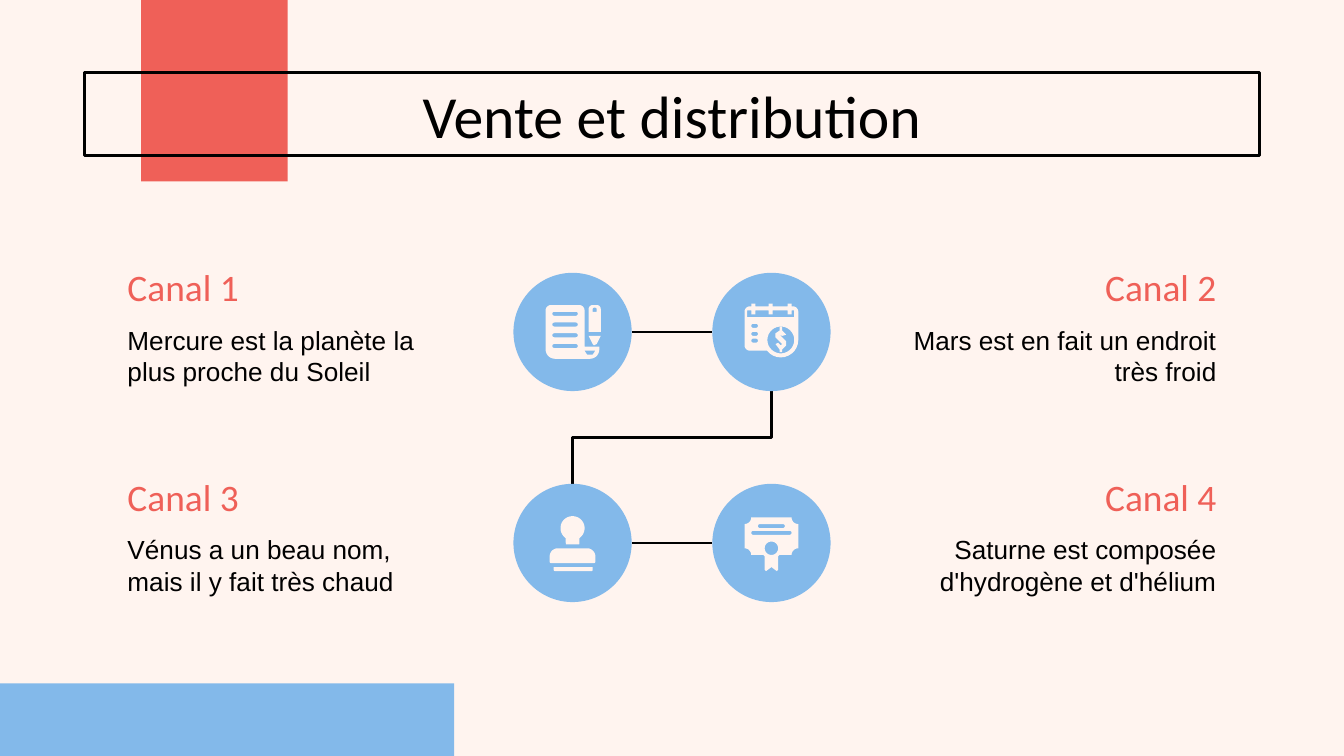
import math
from dataclasses import dataclass

from lxml import etree
from pptx import Presentation
from pptx import util as u
from pptx.dml.color import RGBColor
from pptx.enum import shapes, text
from pptx.oxml.ns import qn


@dataclass(frozen=True)
class Theme:
    cream: str = "FFF4EF"
    coral: str = "EF6058"
    blue: str = "83B9EA"
    ink: str = "000000"
    display: str = "Calibri"
    plain: str = "Arial"
    title: int = 32
    heading: int = 20
    body: int = 14
    line: float = 1.5


THEME = Theme()
WIDTH = 10
HEIGHT = WIDTH * 9 / 16
DISC = 0.88
DISC_COLUMNS, DISC_ROWS = (4.26, 5.74), (2.47, 4.04)  # disc centres
TEXT_COLUMNS, TEXT_ROWS = (0.85, 6.54), (1.96, 3.52)
TEXT_WIDTH, HEADING_HEIGHT = 2.61, 0.35
RECT, OVAL = shapes.MSO_SHAPE.RECTANGLE, shapes.MSO_SHAPE.OVAL

CHANNELS = [
    ("Canal 1", "Mercure est la planète la plus proche du Soleil"),
    ("Canal 2", "Mars est en fait un endroit très froid"),
    ("Canal 3", "Vénus a un beau nom, mais il y fait très chaud"),
    ("Canal 4", "Saturne est composée d'hydrogène et d'hélium"),
]


# Contours: lists of points in inches from the disc centre, angles clockwise
def arc(x, y, radius, start, end):
    steps = max(6, abs(end - start) // 12)
    angles = [math.radians(start + (end - start) * i / steps) for i in range(steps + 1)]
    return [(x + radius * math.cos(a), y + radius * math.sin(a)) for a in angles]


def rounded(x, y, width, height, top, bottom):
    right, base = x + width, y + height
    return (arc(x + top, y + top, top, 180, 270)
            + arc(right - top, y + top, top, 270, 360)
            + arc(right - bottom, base - bottom, bottom, 0, 90)
            + arc(x + bottom, base - bottom, bottom, 90, 180))


def bars(x, tops, width, height=0.03):
    return [rounded(x, y, width, height, height / 2, height / 2) for y in tops]


def rings(start, end):
    return [point for x in (-0.15, -0.02, 0.12)
            for point in ((x, start), (x, end), (x + 0.03, end), (x + 0.03, start))]


# Each icon is a list of outlines; contours after the first are cut out
CONTRACT = [
    [arc(-0.16, -0.16, 0.04, 180, 270) + arc(0.05, -0.16, 0.04, 270, 360)
     + [(0.09, 0.11), (0.2, 0.11)]
     + arc(0.13, 0.13, 0.07, 0, 90) + arc(-0.13, 0.13, 0.07, 90, 180),
     *bars(-0.15, [-0.15, -0.07, 0.01, 0.09], 0.19),
     [(0.09, 0.14), (0.17, 0.14), (0.15, 0.17), (0.11, 0.17)]],
    [[(0.12, 0.03), (0.21, 0.03), (0.18, 0.09), (0.16, 0.1), (0.15, 0.09)]],
    [rounded(0.12, -0.2, 0.09, 0.2, 0.03, 0), rounded(0.15, -0.18, 0.03, 0.03, 0.01, 0)],
]
CALENDAR = [
    [[(0.06, -0.04), (0.08, -0.04), (0.08, -0.01), (0.11, 0.02), (0.08, 0.03),
      (0.06, 0.02), (0.11, 0.07), (0.11, 0.1), (0.08, 0.13), (0.08, 0.15),
      (0.06, 0.15), (0.06, 0.13), (0.03, 0.09), (0.05, 0.08), (0.07, 0.1),
      (0.08, 0.09), (0.03, 0.04), (0.03, 0.01), (0.06, -0.01)]],
    [arc(-0.16, -0.15, 0.04, 180, 270) + rings(-0.19, -0.21)
     + arc(0.16, -0.15, 0.04, 270, 360)
     + arc(0.07, 0.06, 0.13, 0, 142) + arc(-0.16, 0.1, 0.04, 90, 180),
     [(-0.18, -0.11), (-0.18, -0.16), *rings(-0.16, -0.13), (0.17, -0.16), (0.17, -0.11)],
     *bars(-0.15, [-0.06, 0, 0.05], 0.05),
     arc(0.07, 0.06, 0.1, 0, 360)],
]
STAMP = [
    [rounded(-0.17, 0.04, 0.34, 0.11, 0.06, 0.01)],
    [rounded(-0.14, 0.18, 0.29, 0.03, 0, 0.01)],
    [arc(0, -0.11, 0.09, 125, 415) + [(0.05, 0.01), (-0.05, 0.01)]],
]
DIPLOMA = [
    [arc(-0.2, -0.19, 0.05, 90, 0) + arc(0.2, -0.19, 0.05, 180, 90)
     + arc(0.2, 0.09, 0.05, 270, 180)
     + [(0.06, 0.09), (0.05, 0.1), (0.05, 0.2), (0.04, 0.21), (0, 0.18),
        (-0.04, 0.21), (-0.05, 0.2), (-0.05, 0.1), (-0.06, 0.09)]
     + arc(-0.2, 0.09, 0.05, 0, -90),
     *bars(-0.1, [-0.14], 0.2),
     *bars(-0.15, [-0.09], 0.3),
     arc(0, 0.04, 0.05, 0, 360)],
]
ICONS = [CONTRACT, CALENDAR, STAMP, DIPLOMA]


def paint(shape, colour):
    shape.shadow.inherit = False
    shape.fill.solid()
    shape.fill.fore_color.rgb = RGBColor.from_string(colour)
    shape.line.fill.background()


def add_block(page, kind, left, top, width, height, colour):
    paint(page.shapes.add_shape(kind, *map(u.Inches, (left, top, width, height))), colour)


def add_outline(holder, contours, x, y):
    builder = None
    for contour in contours:
        corners = [(u.Inches(x + dx), u.Inches(y + dy)) for dx, dy in contour]
        if builder is None:
            builder = holder.shapes.build_freeform(*corners[0])
        else:
            builder.move_to(*corners[0])
        builder.add_line_segments(corners[1:], close=True)
    paint(builder.convert_to_shape(), THEME.cream)


def add_icon(page, outlines, x, y):
    add_block(page, OVAL, x - DISC / 2, y - DISC / 2, DISC, DISC, THEME.blue)
    holder = page.shapes.add_group_shape() if len(outlines) > 1 else page
    for contours in outlines:
        add_outline(holder, contours, x, y)


def write(shape, words, size, font, colour, align, anchor):
    frame = shape.text_frame
    frame.word_wrap = True
    frame.auto_size = text.MSO_AUTO_SIZE.NONE
    frame.vertical_anchor = anchor
    frame.margin_left = frame.margin_right = u.Inches(0.1)
    frame.margin_top = frame.margin_bottom = u.Inches(0.1)
    para = frame.paragraphs[0]
    para.alignment = align
    span = para.add_run()
    span.text = words
    span.font.size = u.Pt(size)
    span.font.name = font
    span.font.color.rgb = RGBColor.from_string(colour)


def add_title(page, words):
    title = page.shapes.title
    title.left, title.top = u.Inches(0.63), u.Inches(0.54)
    title.width, title.height = u.Inches(8.74), u.Inches(0.62)
    title.line.color.rgb = RGBColor.from_string(THEME.ink)
    title.line.width = u.Pt(THEME.line)
    write(title, words, THEME.title, THEME.display, THEME.ink,
          text.PP_ALIGN.CENTER, text.MSO_ANCHOR.MIDDLE)


def add_link(page, kind, x1, y1, x2, y2):
    link = page.shapes.add_connector(kind, *map(u.Inches, (x1, y1, x2, y2)))
    link.line.color.rgb = RGBColor.from_string(THEME.ink)
    link.line.width = u.Pt(THEME.line)
    etree.SubElement(link.element.spPr, qn("a:effectLst"))
    return link


def add_links(page):
    left, right = DISC_COLUMNS
    upper, lower = DISC_ROWS
    for y in DISC_ROWS:
        add_link(page, shapes.MSO_CONNECTOR.STRAIGHT, left + DISC / 2, y, right - DISC / 2, y)
    # The elbow leaves downwards, so its frame is a quarter turn
    x, y = (left + right) / 2, (upper + lower) / 2
    drop, run = (lower - upper - DISC) / 2, (right - left) / 2
    elbow = add_link(page, shapes.MSO_CONNECTOR.ELBOW, x - drop, y - run, x + drop, y + run)
    elbow.element.spPr.find(qn("a:xfrm")).set("rot", str(90 * 60000))


def add_channel(page, heading, body, left, top, align):
    rows = [
        (heading, top, HEADING_HEIGHT, THEME.heading, THEME.display, THEME.coral,
         text.MSO_ANCHOR.MIDDLE),
        (body, top + HEADING_HEIGHT, 0.69, THEME.body, THEME.plain, THEME.ink,
         text.MSO_ANCHOR.TOP),
    ]
    for words, y, height, size, font, colour, anchor in rows:
        box = page.shapes.add_textbox(*map(u.Inches, (left, y, TEXT_WIDTH, height)))
        write(box, words, size, font, colour, align, anchor)


def main():
    deck = Presentation()
    deck.slide_width, deck.slide_height = u.Inches(WIDTH), u.Inches(HEIGHT)
    page = deck.slides.add_slide(deck.slide_layouts[5])
    page.background.fill.solid()
    page.background.fill.fore_color.rgb = RGBColor.from_string(THEME.cream)
    # Colour blocks, then the title moved in front of them
    add_block(page, RECT, 1.05, 0, 1.09, 1.35, THEME.coral)
    add_block(page, RECT, 0, HEIGHT - 0.54, 3.38, 0.54, THEME.blue)
    add_title(page, "Vente et distribution")
    page.shapes.element.append(page.shapes.title.element)
    # Channels on a two by two grid
    add_links(page)
    aligns = (text.PP_ALIGN.LEFT, text.PP_ALIGN.RIGHT)
    for index, (channel, icon) in enumerate(zip(CHANNELS, ICONS)):
        row, column = divmod(index, 2)
        add_icon(page, icon, DISC_COLUMNS[column], DISC_ROWS[row])
        add_channel(page, *channel, TEXT_COLUMNS[column], TEXT_ROWS[row], aligns[column])
    deck.save("out.pptx")


if __name__ == "__main__":
    main()
